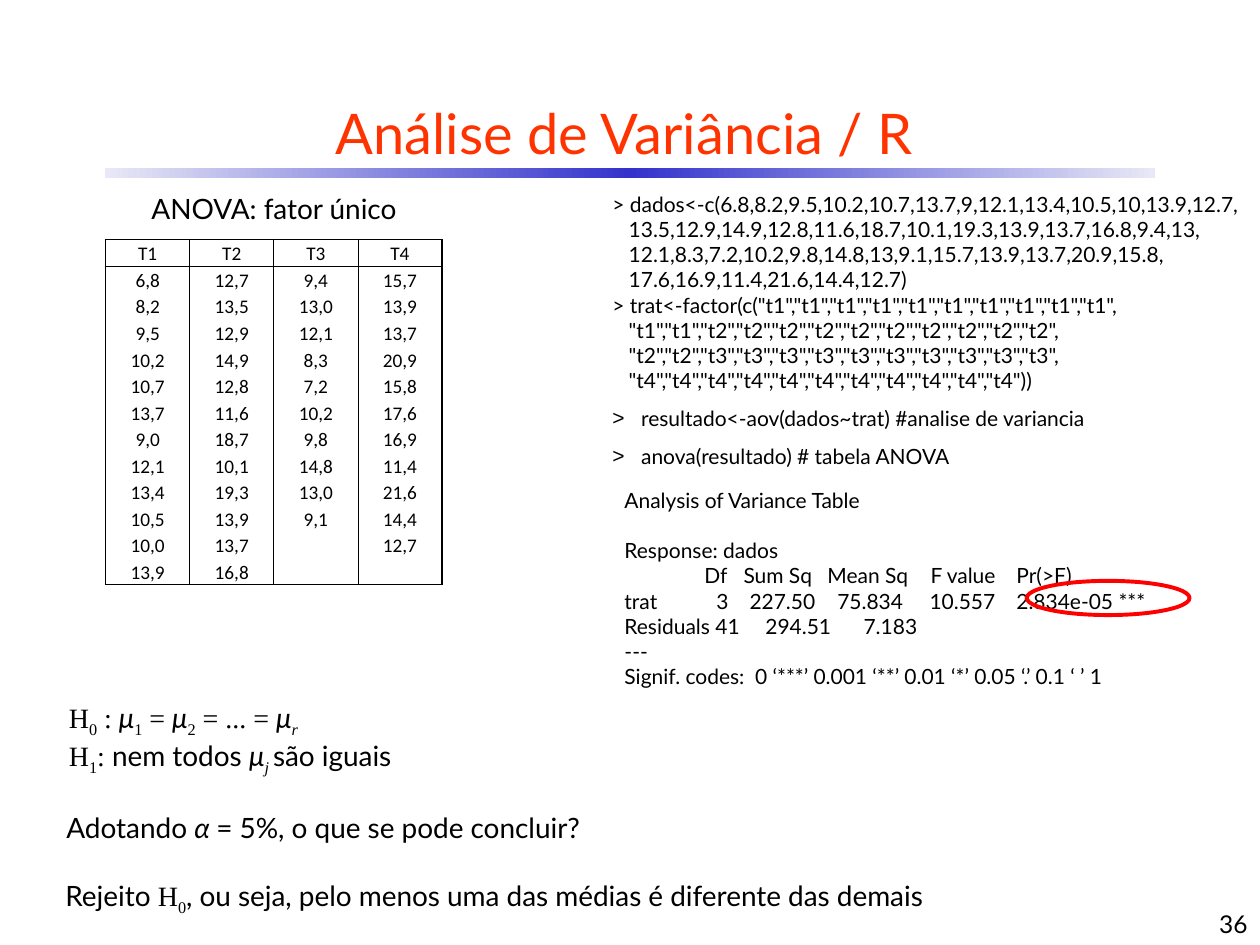
import copy

import lxml.etree
import pptx
import pptx.dml.color
import pptx.enum.shapes
import pptx.enum.text
import pptx.oxml.ns
import pptx.util

Cm = pptx.util.Cm
Pt = pptx.util.Pt
qn = pptx.oxml.ns.qn
ALIGN = pptx.enum.text.PP_ALIGN
ANCHOR = pptx.enum.text.MSO_ANCHOR
SHAPE = pptx.enum.shapes.MSO_SHAPE

COLORS = {"title": "FF3300", "text": "000000", "paper": "FFFFFF",
          "bar": "3333CC", "bar_end": "E8E8F6", "highlight": "FF0000"}
SERIF = "Times New Roman"

TREATMENTS = {
    "T1": "6,8 8,2 9,5 10,2 10,7 13,7 9,0 12,1 13,4 10,5 10,0 13,9",
    "T2": "12,7 13,5 12,9 14,9 12,8 11,6 18,7 10,1 19,3 13,9 13,7 16,8",
    "T3": "9,4 13,0 12,1 8,3 7,2 10,2 9,8 14,8 13,0 9,1",
    "T4": "15,7 13,9 13,7 20,9 15,8 17,6 16,9 11,4 21,6 14,4 12,7",
}
DATA_COMMAND = (
    "> dados<-c(6.8,8.2,9.5,10.2,10.7,13.7,9,12.1,13.4,10.5,10,13.9,12.7,\v"
    "13.5,12.9,14.9,12.8,11.6,18.7,10.1,19.3,13.9,13.7,16.8,9.4,13,\v"
    "12.1,8.3,7.2,10.2,9.8,14.8,13,9.1,15.7,13.9,13.7,20.9,15.8,\v"
    "17.6,16.9,11.4,21.6,14.4,12.7)")
# Text, space before in points, tab stops in centimetres
ANOVA_OUTPUT = [
    ("Analysis of Variance Table", 0, []),
    ("Response: dados", 14.4, []),
    ("\tDf\tSum Sq\tMean Sq\tF value\tPr(>F)", 0, [1.61, 2.4, 4.09, 6.17, 7.9]),
    ("trat\t3\t227.50\t75.834\t10.557\t2.834e-05 ***", 0, [1.85, 2.52, 4.29, 6.15, 7.9]),
    ("Residuals 41\t294.51\t7.183", 0, [2.84, 4.82]),
    ("---", 0, []),
    ("Signif. codes:  0 ‘***’ 0.001 ‘**’ 0.01 ‘*’ 0.05 ‘.’ 0.1 ‘ ’ 1", 0, []),
]


def rgb(name):
    return pptx.dml.color.RGBColor.from_string(COLORS[name])


def write(paragraph, text, size=16, font="Lato", color="text", italic=False, subscript=False):
    """Append text to the paragraph; a vertical tab starts a new line."""
    for number, line in enumerate(text.split("\v")):
        if number:
            paragraph.add_line_break()
        run = paragraph.add_run()
        run.text = line
        run.font.size = Pt(size)
        run.font.name = font
        run.font.italic = italic
        run.font.color.rgb = rgb(color)
        if subscript:
            run._r.get_or_add_rPr().set("baseline", "-25000")


def next_paragraph(frame):
    first = frame.paragraphs[0]
    return frame.add_paragraph() if first.runs else first


def place(shape, left, top, width, height):
    shape.left, shape.top, shape.width, shape.height = map(Cm, (left, top, width, height))


def add_text_box(slide, left, top, width, height):
    frame = slide.shapes.add_textbox(Cm(left), Cm(top), Cm(width), Cm(height)).text_frame
    frame.word_wrap = True
    return frame


def add_line(slide, box, parts, align=ALIGN.LEFT):
    """Write (text, format) parts as one line in a new text box."""
    frame = add_text_box(slide, *box)
    write_parts(frame, parts)
    frame.paragraphs[0].alignment = align
    return frame


def write_parts(frame, parts):
    paragraph = next_paragraph(frame)
    for text, style in parts:
        write(paragraph, text, **style)


def set_tab_stops(paragraph, stops):
    if stops:
        tabs = lxml.etree.SubElement(paragraph._p.get_or_add_pPr(), qn("a:tabLst"))
        for stop in stops:
            lxml.etree.SubElement(tabs, qn("a:tab"), pos=str(Cm(stop)), algn="l")


def set_hanging_bullet(paragraph, indent, bullet=None):
    properties = paragraph._p.get_or_add_pPr()
    properties.set("marL", str(Cm(indent)))
    properties.set("indent", str(-Cm(indent)))
    if bullet:
        lxml.etree.SubElement(properties, qn("a:buChar"), char=bullet)
    else:
        lxml.etree.SubElement(properties, qn("a:buNone"))


def add_title_bar(slide):
    bar = slide.shapes.add_shape(SHAPE.RECTANGLE, Cm(2.12), Cm(3.39), Cm(21.17), Cm(0.2))
    bar.shadow.inherit = False
    bar.line.fill.background()
    bar.fill.gradient()
    bar.fill.gradient_angle = 0
    stops = bar.fill.gradient_stops
    for stop, position in zip(stops, (0, 1)):
        stop.color.rgb = rgb("bar_end")
        stop.position = position
    middle = copy.deepcopy(stops[0]._gs)
    stops[0]._gs.addnext(middle)
    middle.set("pos", "50000")
    middle.find(qn("a:srgbClr")).set("val", COLORS["bar"])


def add_highlight(slide):
    ring = slide.shapes.add_shape(SHAPE.OVAL, Cm(20.7), Cm(11.71), Cm(3.28), Cm(0.69))
    ring.shadow.inherit = False
    ring.fill.background()
    ring.line.color.rgb = rgb("highlight")
    ring.line.width = Pt(2.25)


def set_borders(cell, **widths):
    """Give the sides L, R, T and B a width in points; zero means no line."""
    properties = cell._tc.get_or_add_tcPr()
    for side, width in widths.items():
        line = lxml.etree.SubElement(properties, qn("a:ln" + side), w=str(Pt(width)))
        if width:
            fill = lxml.etree.SubElement(line, qn("a:solidFill"))
            lxml.etree.SubElement(fill, qn("a:srgbClr"), val=COLORS["text"])
        else:
            lxml.etree.SubElement(line, qn("a:noFill"))


def add_treatment_table(slide):
    columns = [[name, *values.split()] for name, values in TREATMENTS.items()]
    row_count, column_count = max(map(len, columns)), len(columns)
    table = slide.shapes.add_table(row_count, column_count, Cm(2.13), Cm(4.83),
                                   Cm(6.78), Cm(6.96)).table
    table.first_row = table.horz_banding = False
    for row in table.rows:
        row.height = Cm(6.96 / row_count)
    for c, column in enumerate(columns):
        for r in range(row_count):
            cell = table.cell(r, c)
            set_borders(cell, L=1 if c == 0 else 0.5,
                        R=1 if c == column_count - 1 else 0.5,
                        T={0: 1, 1: 0.5}.get(r, 0),
                        B={0: 0.5, row_count - 1: 1}.get(r, 0))
            cell.fill.solid()
            cell.fill.fore_color.rgb = rgb("paper")
            cell.vertical_anchor = ANCHOR.BOTTOM
            cell.margin_left = cell.margin_right = cell.margin_top = Cm(0.02)
            cell.margin_bottom = 0
            paragraph = cell.text_frame.paragraphs[0]
            paragraph.alignment = ALIGN.CENTER
            if r < len(column):
                write(paragraph, column[r], size=11, font="Calibri")
            else:
                paragraph._p.get_or_add_endParaRPr().set("sz", "1100")


def factor_command():
    rows = [["t1"] * 10, ["t1"] * 2 + ["t2"] * 10, ["t2"] * 2 + ["t3"] * 10, ["t4"] * 11]
    lines = [",".join(f'"{level}"' for level in row) for row in rows]
    return "> trat<-factor(c(" + ",\v".join(lines) + "))"


def add_commands(body):
    place(body, 12.09, 3.73, 13.36, 6.32)
    frame = body.text_frame
    frame.auto_size = pptx.enum.text.MSO_AUTO_SIZE.NONE
    commands = [(DATA_COMMAND, 0.33, None, 1),
                (factor_command(), 0.33, None, 1),
                ("resultado<-aov(dados~trat) #analise de variancia", 0.58, ">", 1.5),
                ("anova(resultado) # tabela ANOVA", 0.58, ">", 1.5)]
    for text, indent, bullet, spacing in commands:
        paragraph = next_paragraph(frame)
        paragraph.line_spacing = spacing
        paragraph.space_before = Pt(0)
        set_hanging_bullet(paragraph, indent, bullet)
        write(paragraph, text, size=12)


def add_anova_output(slide):
    frame = add_text_box(slide, 12.34, 9.7, 12.7, 4.37)
    for text, space_before, stops in ANOVA_OUTPUT:
        paragraph = next_paragraph(frame)
        paragraph.space_before = Pt(space_before)
        set_tab_stops(paragraph, stops)
        write(paragraph, text, size=12)


def add_conclusions(slide):
    plain, italic, serif = {}, {"italic": True}, {"font": SERIF}
    sub = {"font": SERIF, "subscript": True}
    sub_italic = {**sub, "italic": True}
    mu = ("μ", italic)
    hypotheses = add_line(slide, (1.14, 14, 8.69, 1.63), [
        ("H", serif), ("0", sub), (" : ", serif), mu, ("1", sub), (" = ", serif),
        mu, ("2", sub), (" = ... = ", serif), mu, ("r", sub_italic)])
    write_parts(hypotheses, [
        ("H", serif), ("1", sub), (":", serif), (" nem todos ", plain), mu,
        ("j ", sub_italic), ("são iguais", plain)])
    add_line(slide, (1.09, 16.21, 21.82, 0.94), [
        ("Adotando ", plain), ("α ", italic), ("= 5%, o que se pode concluir?", plain)])
    add_line(slide, (1.07, 17.58, 21.82, 0.94), [
        ("Rejeito ", plain), ("H", serif), ("0", sub),
        (", ou seja, pelo menos uma das médias é diferente das demais", plain)])


def main():
    deck = pptx.Presentation()
    deck.slide_width, deck.slide_height = Cm(25.4), Cm(19.05)
    slide = deck.slides.add_slide(deck.slide_layouts[1])
    title, commands = slide.placeholders
    place(title, 0.84, 1.7, 23.5, 1.91)
    title.text_frame.vertical_anchor = ANCHOR.MIDDLE
    title.text_frame.paragraphs[0].alignment = ALIGN.CENTER
    write(title.text_frame.paragraphs[0], "Análise de Variância / R", size=32, color="title")
    add_title_bar(slide)
    add_anova_output(slide)
    add_commands(commands)
    add_conclusions(slide)
    add_highlight(slide)
    page = add_line(slide, (20.12, 17.78, 5.28, 1.27), [("36", {"size": 14})], ALIGN.RIGHT)
    page.vertical_anchor = ANCHOR.BOTTOM
    add_line(slide, (1.93, 3.73, 7.19, 0.94), [("ANOVA: fator único", {})], ALIGN.CENTER)
    add_treatment_table(slide)
    deck.save("out.pptx")


if __name__ == "__main__":
    main()
